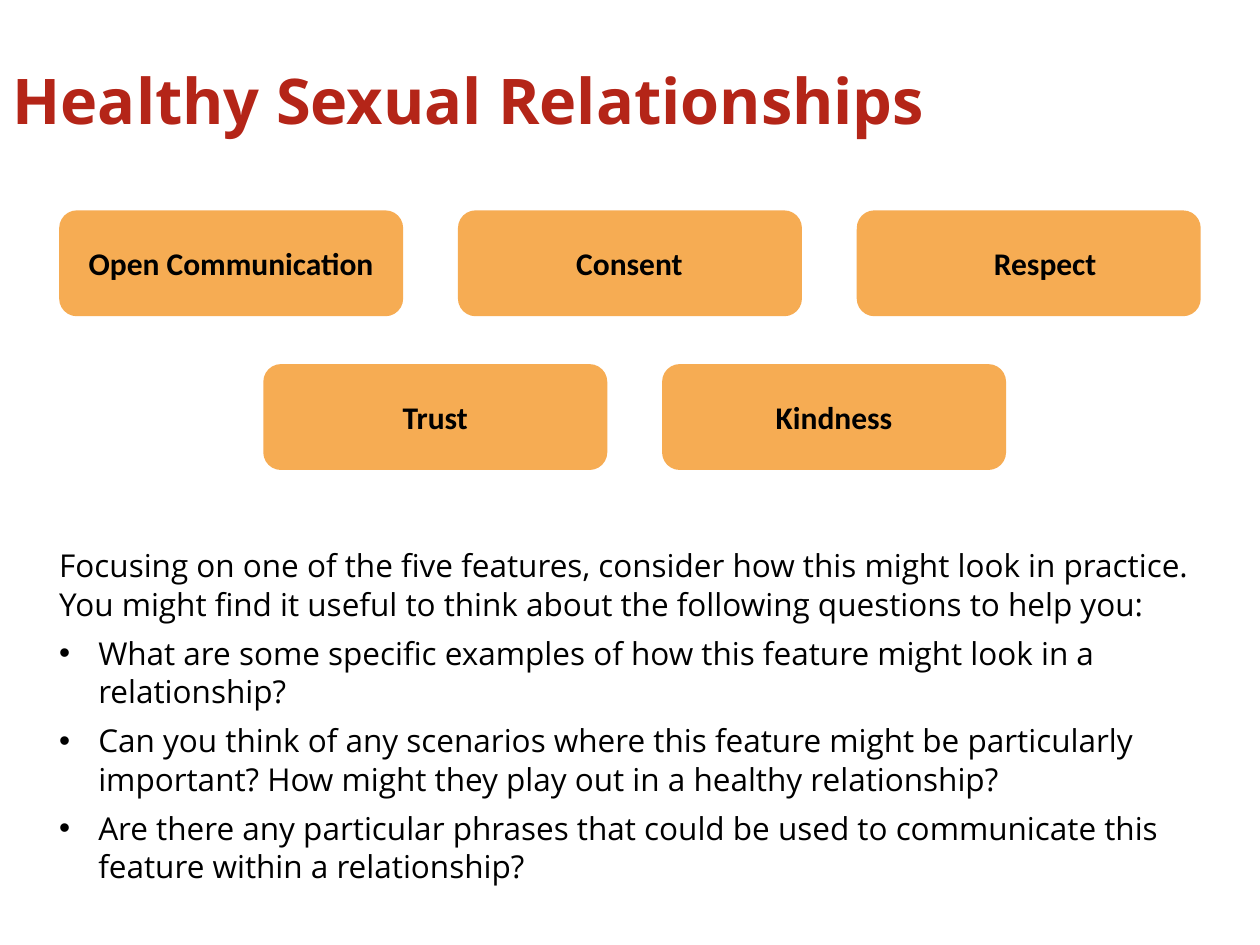
from typing import NamedTuple

from lxml.etree import SubElement
from pptx import Presentation
from pptx.dml.color import RGBColor
from pptx.enum.shapes import MSO_SHAPE as SHAPE
from pptx.enum.text import MSO_ANCHOR as ANCHOR, MSO_AUTO_SIZE as FIT, PP_ALIGN as ALIGN
from pptx.oxml.ns import qn
from pptx.util import Inches, Pt

CARD_W, CARD_H, PITCH = 2.73, 0.84, 3.165
RED, ORANGE, BLACK = "B42518", "F59E36", "000000"


class Feature(NamedTuple):
    name: str
    left: float
    top: float
    label_left: float
    label_width: float


def set_color(color, value: str) -> None:
    color.rgb = RGBColor.from_string(value)


def place(shape, left: float, top: float, width: float, height: float) -> None:
    shape.left, shape.top = Inches(left), Inches(top)
    shape.width, shape.height = Inches(width), Inches(height)


def write(p, text: str, *, size: int = 18, font: str = "Open Sans",
          color: str = BLACK, bold: bool = False, align=ALIGN.LEFT) -> None:
    p.alignment = align
    r = p.add_run()
    r.text = text
    r.font.size, r.font.name, r.font.bold = Pt(size), font, bold
    set_color(r.font.color, color)


def set_bullet(p, char: str = "") -> None:
    pPr = p._p.get_or_add_pPr()
    indent = Inches(0.31) if char else 0
    pPr.set("marL", str(indent))
    pPr.set("indent", str(-indent))
    if char:
        SubElement(pPr, qn("a:buFont")).set("typeface", "Arial")
        SubElement(pPr, qn("a:buChar")).set("char", char)
    else:
        SubElement(pPr, qn("a:buNone"))


def add_card(s, feature: Feature) -> None:
    card = s.shapes.add_shape(SHAPE.ROUNDED_RECTANGLE, Inches(feature.left),
                              Inches(feature.top), Inches(CARD_W), Inches(CARD_H))
    card.shadow.inherit = False
    card.fill.solid()
    set_color(card.fill.fore_color, ORANGE)
    rgb = card._element.spPr.find(qn("a:solidFill")).find(qn("a:srgbClr"))
    SubElement(rgb, qn("a:alpha")).set("val", "85000")
    card.line.fill.background()


def add_label(s, feature: Feature) -> None:
    label = s.shapes.add_textbox(Inches(feature.label_left), Inches(feature.top + 0.22),
                                 Inches(feature.label_width), Inches(0.4))
    tf = label.text_frame
    tf.word_wrap, tf.auto_size = True, FIT.SHAPE_TO_FIT_TEXT
    write(tf.paragraphs[0], feature.name, font="Calibri", bold=True, align=ALIGN.CENTER)


def add_title(s, text: str) -> None:
    title = s.shapes.title
    place(title, 0, 0.45, 10, 0.68)
    tf = title.text_frame
    tf.auto_size, tf.vertical_anchor = FIT.NONE, ANCHOR.MIDDLE
    write(tf.paragraphs[0], text, size=36, color=RED, bold=True)


def add_questions(s, intro: str, questions: list[str]) -> None:
    body = s.placeholders[1]
    place(body, 0.47, 4.28, 9.02, 2.81)
    tf = body.text_frame
    tf.word_wrap, tf.auto_size = True, FIT.SHAPE_TO_FIT_TEXT
    tf.vertical_anchor = ANCHOR.TOP
    tf.margin_left = tf.margin_right = 0
    for i, text in enumerate([intro, *questions]):
        p = tf.add_paragraph() if i else tf.paragraphs[0]
        set_bullet(p, "•" if i else "")
        p.line_spacing, p.space_before, p.space_after = Pt(22), Pt(0), Pt(6)
        write(p, text)


def main() -> None:
    prs = Presentation()
    prs.slide_width, prs.slide_height = Inches(10), Inches(7.5)
    s = prs.slides.add_slide(prs.slide_layouts[1])
    add_title(s, "Healthy Sexual Relationships")
    add_questions(
        s,
        "Focusing on one of the five features, consider how this might look in practice. "
        "You might find it useful to think about the following questions to help you:",
        [
            "What are some specific examples of how this feature might look in a relationship?",
            "Can you think of any scenarios where this feature might be particularly "
            "important? How might they play out in a healthy relationship?",
            "Are there any particular phrases that could be used to communicate this "
            "feature within a relationship?",
        ],
    )
    top_left, low_left = 0.47, 2.09
    features = [
        Feature("Open Communication", top_left, 1.67, top_left, CARD_W),
        Feature("Consent", top_left + PITCH, 1.67, 4.44, 1.11),
        Feature("Respect", top_left + 2 * PITCH, 1.67, 7.61, 1.37),
        Feature("Trust", low_left, 2.89, low_left, CARD_W),
        Feature("Kindness", low_left + PITCH, 2.89, low_left + PITCH, CARD_W),
    ]
    for feature in features:
        add_card(s, feature)
        add_label(s, feature)
    prs.save("out.pptx")


if __name__ == "__main__":
    main()
